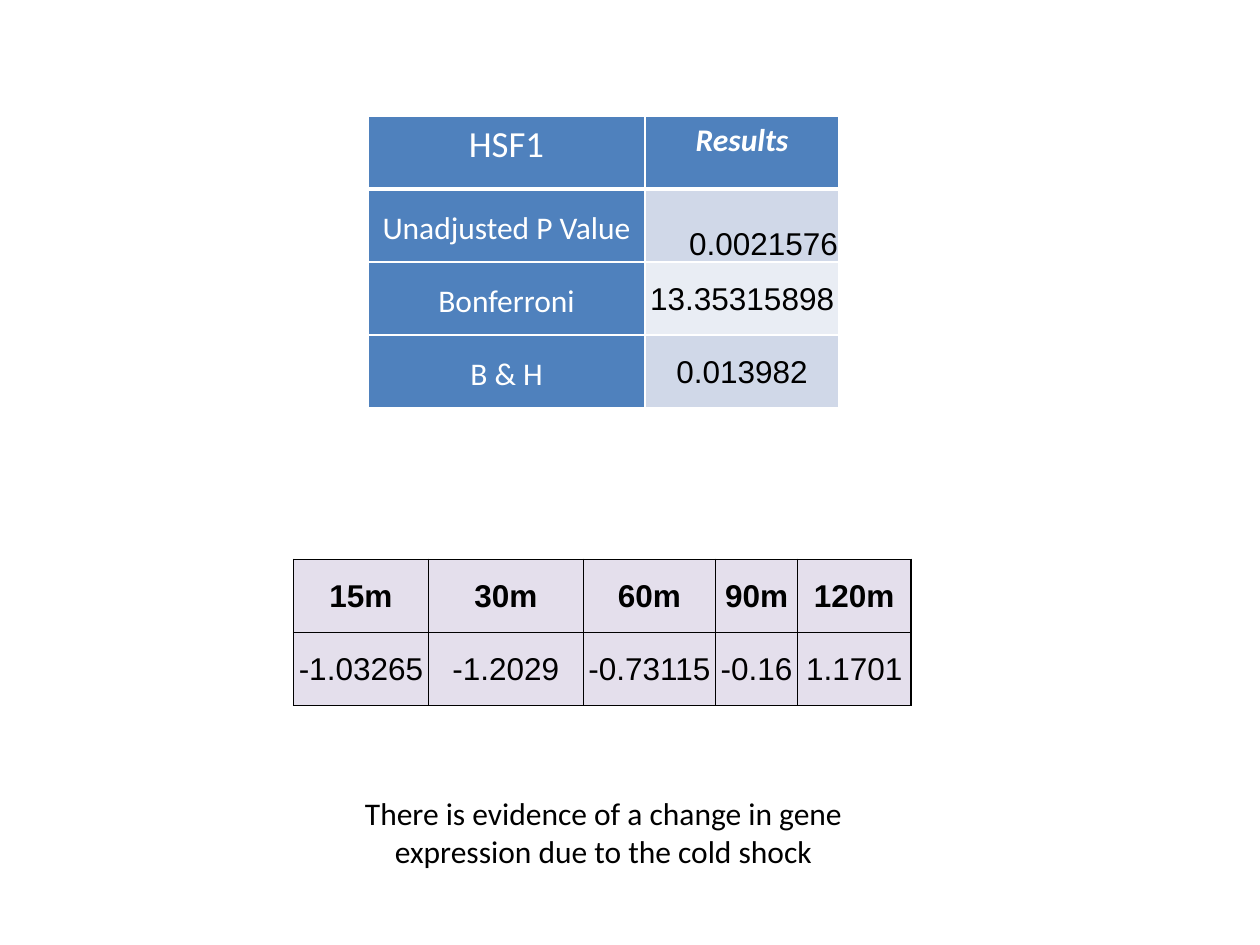
import pptx
import pptx.dml.color
import pptx.enum.text
import pptx.oxml.ns
import pptx.util
from lxml import etree

Inches = pptx.util.Inches
Pt = pptx.util.Pt
RGBColor = pptx.dml.color.RGBColor
ALIGN = pptx.enum.text.PP_ALIGN
ANCHOR = pptx.enum.text.MSO_ANCHOR
qn = pptx.oxml.ns.qn

WHITE = RGBColor(0xFF, 0xFF, 0xFF)
BLACK = RGBColor(0x00, 0x00, 0x00)
BLUE = RGBColor(0x4F, 0x81, 0xBD)
BAND_DARK = RGBColor(0xD0, 0xD8, 0xE8)
BAND_LIGHT = RGBColor(0xE9, 0xED, 0xF4)
LILAC = RGBColor(0xE4, 0xDF, 0xEC)

ROW_HEIGHT = Inches(0.58)
LABEL_INSETS = (0.07, 0, 0.07, 0)
VALUE_INSETS = (0.01, 0.01, 0.01, 0)

TESTS = [("Unadjusted P Value", "0.0021576"),
         ("Bonferroni", "13.35315898"),
         ("B & H", "0.013982")]
TIMES = [("15m", "-1.03265", 1.07), ("30m", "-1.2029", 1.23),
         ("60m", "-0.73115", 1.05), ("90m", "-0.16", 0.65),
         ("120m", "1.1701", 0.9)]


def add_text(p, text, font, color, size=18, bold=False, italic=False):
    r = p.add_run()
    r.text = text
    r.font.name = font
    r.font.size = Pt(size)
    r.font.bold = bold
    r.font.italic = italic
    r.font.color.rgb = color


def set_borders(cell, color, bottom=1):
    """Draw 1 pt lines on all sides, with a chosen width below."""
    tc_pr = cell._tc.get_or_add_tcPr()
    for side, width in (("L", 1), ("R", 1), ("T", 1), ("B", bottom)):
        ln = etree.SubElement(tc_pr, qn("a:ln" + side), w=str(Pt(width)))
        solid = etree.SubElement(ln, qn("a:solidFill"))
        etree.SubElement(solid, qn("a:srgbClr"), val=str(color))


def style_cell(cell, fill, insets, line, bottom=1, anchor=ANCHOR.MIDDLE,
               align=ALIGN.CENTER, spacing=None):
    """Format a cell and return its paragraph."""
    set_borders(cell, line, bottom)
    cell.fill.solid()
    cell.fill.fore_color.rgb = fill
    (cell.margin_left, cell.margin_top,
     cell.margin_right, cell.margin_bottom) = map(Inches, insets)
    cell.vertical_anchor = anchor
    p = cell.text_frame.paragraphs[0]
    p.alignment = align
    if spacing:
        p.line_spacing = spacing
    return p


def add_grid(slide, left, top, widths, rows):
    """Add an unbanded table with the given column widths in inches."""
    table = slide.shapes.add_table(rows, len(widths), left, top,
                                   Inches(sum(widths)), ROW_HEIGHT * rows).table
    table.first_row = False
    table.horz_banding = False
    for column, width in zip(table.columns, widths):
        column.width = Inches(width)
    for row in table.rows:
        row.height = ROW_HEIGHT
    return table


def add_p_value_table(slide, left, top):
    table = add_grid(slide, left, top, (2.2, 1.54), len(TESTS) + 1)
    headers = (("HSF1", 21, False), ("Results", 18, True))
    for col, (text, size, strong) in enumerate(headers):
        p = style_cell(table.cell(0, col), BLUE, LABEL_INSETS, WHITE, bottom=3,
                       anchor=ANCHOR.TOP, spacing=1.15)
        add_text(p, text, "Calibri", WHITE, size, strong, strong)

    for row, (label, value) in enumerate(TESTS, start=1):
        p = style_cell(table.cell(row, 0), BLUE, LABEL_INSETS, WHITE,
                       spacing=1.15)
        add_text(p, label, "Calibri", WHITE)
        first = row == 1
        p = style_cell(table.cell(row, 1),
                       BAND_DARK if row % 2 else BAND_LIGHT,
                       VALUE_INSETS, WHITE,
                       anchor=ANCHOR.BOTTOM if first else ANCHOR.MIDDLE,
                       align=ALIGN.RIGHT if first else ALIGN.CENTER)
        add_text(p, value, "Arial", BLACK)


def add_time_table(slide, left, top):
    table = add_grid(slide, left, top, [width for _, _, width in TIMES], 2)
    for col, (time, value, _) in enumerate(TIMES):
        for row, text in enumerate((time, value)):
            p = style_cell(table.cell(row, col), LILAC, VALUE_INSETS, BLACK)
            add_text(p, text, "Arial", BLACK, bold=row == 0)


def add_conclusion(slide, left, top, width, height):
    tf = slide.shapes.add_textbox(left, top, width, height).text_frame
    tf.word_wrap = True
    tf.auto_size = pptx.enum.text.MSO_AUTO_SIZE.SHAPE_TO_FIT_TEXT
    p = tf.paragraphs[0]
    p.alignment = ALIGN.CENTER
    add_text(p, "There is evidence of a change in gene expression "
                "due to the cold shock", "Calibri", BLACK)


def main():
    prs = pptx.Presentation()
    prs.slide_width = Inches(10)
    prs.slide_height = Inches(7.5)
    slide = prs.slides.add_slide(prs.slide_layouts[6])
    add_p_value_table(slide, Inches(2.92), Inches(0.92))
    add_time_table(slide, Inches(2.33), Inches(4.44))
    add_conclusion(slide, Inches(2.25), Inches(6.25), Inches(5.08), Inches(0.71))
    prs.save("out.pptx")


if __name__ == "__main__":
    main()
